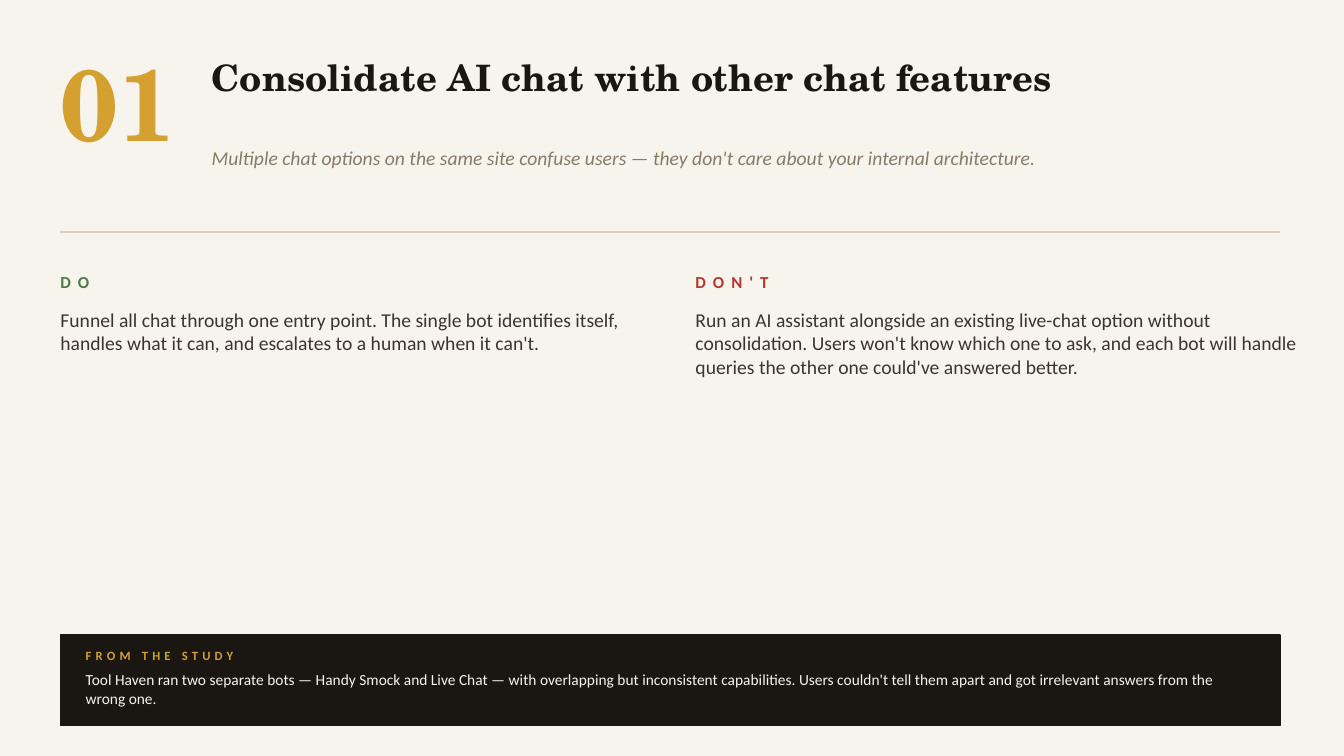
from lxml import etree
from pptx import Presentation
from pptx import util as u
from pptx.dml.color import RGBColor
from pptx.enum import shapes, text
from pptx.oxml.ns import qn

COLORS = {
    "paper": "F7F4EE", "ink": "1A1612", "gold": "D4A030", "muted": "8A7A66",
    "rule": "D8CFC0", "body": "3D352D", "do": "4A7D3F", "dont": "B33A2A",
}
SERIF, SANS = "TeX Gyre Schola", "Calibri"
LEFT, CONTENT_WIDTH = 43.2, 871.2
HEADING_LEFT, HEADING_WIDTH = 151.2, 763.2
COLUMN_WIDTH, COLUMN_STEP = 432, 453.6
STUDY_LEFT = 61.2

ADVICE = [
    ("DO", "do",
     "Funnel all chat through one entry point. The single bot identifies itself, "
     "handles what it can, and escalates to a human when it can't."),
    ("DON'T", "dont",
     "Run an AI assistant alongside an existing live-chat option without consolidation. "
     "Users won't know which one to ask, and each bot will handle queries the other one "
     "could've answered better."),
]


def rgb(name):
    return RGBColor.from_string(COLORS[name])


def write(frame, words, *, size, color, font=SANS, bold=False, italic=False,
          tracking=0, after=0, middle=False):
    """Fill a text frame with one left-aligned paragraph; tracking is in points."""
    frame.margin_left = frame.margin_top = frame.margin_right = frame.margin_bottom = 0
    frame.word_wrap = True
    frame.auto_size = text.MSO_AUTO_SIZE.NONE
    frame.vertical_anchor = text.MSO_ANCHOR.MIDDLE if middle else text.MSO_ANCHOR.TOP
    paragraph = frame.paragraphs[0]
    paragraph.alignment = text.PP_ALIGN.LEFT
    paragraph.space_after = u.Pt(after)
    run = paragraph.add_run()
    run.text = words
    run.font.name, run.font.size = font, u.Pt(size)
    run.font.bold, run.font.italic = bold, italic
    run.font.color.rgb = rgb(color)
    if tracking:
        run.font._element.set("spc", str(tracking * 100))


class GuidelineSlide:
    def __init__(self, deck):
        self.slide = deck.slides.add_slide(deck.slide_layouts[5])
        self.slide.background.fill.solid()
        self.slide.background.fill.fore_color.rgb = rgb("paper")

    def title(self, box, words, **style):
        heading = self.slide.shapes.title
        heading.left, heading.top, heading.width, heading.height = map(u.Pt, box)
        write(heading.text_frame, words, **style)

    def text(self, box, words, **style):
        write(self.slide.shapes.add_textbox(*map(u.Pt, box)).text_frame, words, **style)

    def label(self, box, words, **style):
        self.text(box, words, bold=True, middle=True, **style)

    def rule(self, left, top, width):
        divider = self.slide.shapes.add_connector(
            shapes.MSO_CONNECTOR.STRAIGHT, *map(u.Pt, (left, top, left + width, top)))
        divider.line.color.rgb = rgb("rule")
        divider.line.width = u.Pt(1)
        etree.SubElement(divider._element.spPr, qn("a:effectLst"))

    def panel(self, box, color):
        band = self.slide.shapes.add_shape(
            shapes.MSO_SHAPE.RECTANGLE, *map(u.Pt, box))
        band.shadow.inherit = False
        band.fill.solid()
        band.fill.fore_color.rgb = band.line.color.rgb = rgb(color)
        band.line.width = u.Pt(1)


def main():
    deck = Presentation()
    deck.slide_width, deck.slide_height = u.Pt(960), u.Pt(540)
    page = GuidelineSlide(deck)

    page.text((LEFT, 28.8, 108, 86.4), "01",
              size=72, color="gold", font=SERIF, bold=True)
    page.title((HEADING_LEFT, 39.6, HEADING_WIDTH, 79.2),
               "Consolidate AI chat with other chat features",
               size=26, color="ink", font=SERIF, bold=True)
    page.text((HEADING_LEFT, 104.4, HEADING_WIDTH, 43.2),
              "Multiple chat options on the same site confuse users — "
              "they don't care about your internal architecture.",
              size=14, color="muted", italic=True)
    page.rule(LEFT, 165.6, CONTENT_WIDTH)

    for column, (verdict, color, advice) in enumerate(ADVICE):
        left = LEFT + column * COLUMN_STEP
        page.label((left, 187.2, COLUMN_WIDTH, 28.8), verdict,
                   size=12, color=color, tracking=5)
        page.text((left, 219.6, COLUMN_WIDTH, 223.2), advice,
                  size=14, color="body", after=8)

    page.panel((LEFT, 453.6, CONTENT_WIDTH, 64.8), "ink")
    page.label((STUDY_LEFT, 459.36, 180, 18), "FROM THE STUDY",
               size=9, color="gold", tracking=3)
    page.text((STUDY_LEFT, 478.8, 835.2, 36),
              "Tool Haven ran two separate bots — Handy Smock and Live Chat — with "
              "overlapping but inconsistent capabilities. Users couldn't tell them apart "
              "and got irrelevant answers from the wrong one.",
              size=11, color="paper")

    deck.save("out.pptx")


if __name__ == "__main__":
    main()
